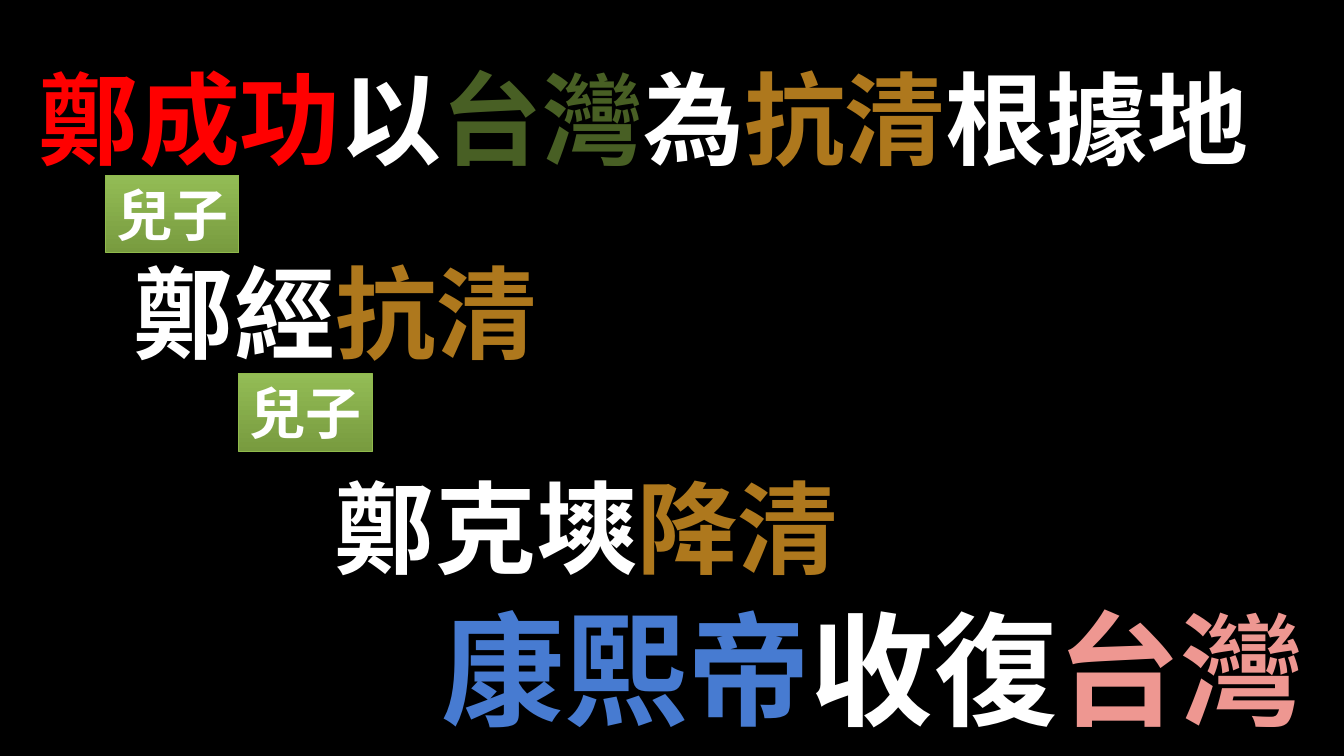
from lxml.etree import SubElement
from pptx import Presentation
from pptx.dml.color import RGBColor
from pptx.enum.shapes import MSO_SHAPE
from pptx.enum.text import MSO_ANCHOR, MSO_AUTO_SIZE, PP_ALIGN
from pptx.oxml.ns import qn
from pptx.util import Inches, Pt

BLACK = RGBColor(0x00, 0x00, 0x00)
WHITE = RGBColor(0xFF, 0xFF, 0xFF)
RED = RGBColor(0xFF, 0x00, 0x00)
GREEN = RGBColor(0x48, 0x5F, 0x24)
GOLD = RGBColor(0xAE, 0x78, 0x1D)
BLUE = RGBColor(0x47, 0x7B, 0xD1)
PINK = RGBColor(0xEE, 0x97, 0x91)
TAG_TOP = RGBColor(0x93, 0xBC, 0x55)
TAG_BOTTOM = RGBColor(0x78, 0x9B, 0x3F)
TAG_EDGE = RGBColor(0x90, 0xBA, 0x4C)

FONT = "Noto Sans CJK SC"
CELL = Inches(0.1)
FRAME = {
    "word_wrap": False,
    "auto_size": MSO_AUTO_SIZE.SHAPE_TO_FIT_TEXT,
    "vertical_anchor": MSO_ANCHOR.TOP,
    "margin_left": CELL,
    "margin_right": CELL,
    "margin_top": CELL // 2,
    "margin_bottom": CELL // 2,
}


def cells(*counts):
    return [round(count * CELL) for count in counts]


def apply(target, values):
    for name, value in values.items():
        setattr(target, name, value)


def place(shape, area):
    apply(shape, dict(zip(("left", "top", "width", "height"), cells(*area))))


def write(shape, spans, size, align=PP_ALIGN.LEFT):
    apply(shape.text_frame, FRAME)
    para = shape.text_frame.paragraphs[0]
    para.alignment = align
    for text, color in spans:
        span = para.add_run()
        span.text = text
        apply(span.font, {"name": FONT, "size": Pt(size), "bold": True})
        span.font.color.rgb = color
        east_asian = SubElement(span.font._element, qn("a:ea"))
        east_asian.set("typeface", FONT)


def add_title(page, area, spans, size):
    title = page.shapes.title
    write(title, spans, size)
    place(title, area)


def add_line(page, area, spans, size):
    box = page.shapes.add_textbox(*cells(*area))
    write(box, spans, size)
    place(box, area)


def add_shadow(shape):
    shape.shadow.inherit = False
    effects = shape._element.spPr.find(qn("a:effectLst"))
    shadow = SubElement(effects, qn("a:outerShdw"), blurRad=str(Pt(4)),
                        dist=str(Pt(3)), dir="5400000", rotWithShape="0")
    color = SubElement(shadow, qn("a:srgbClr"), val=str(BLACK))
    SubElement(color, qn("a:alpha"), val="35000")


def add_son_tag(page, left, top):
    area = (left, top, 13.2, 7.7)
    tag = page.shapes.add_shape(MSO_SHAPE.RECTANGLE, *cells(*area))
    tag.fill.gradient()
    tag.fill.gradient_angle = 270
    for stop, color in zip(tag.fill.gradient_stops, (TAG_TOP, TAG_BOTTOM)):
        stop.color.rgb = color
    tag.line.color.rgb = TAG_EDGE
    tag.line.width = Pt(0.75)
    add_shadow(tag)
    write(tag, [("兒子", WHITE)], 40, PP_ALIGN.CENTER)


def main():
    deck = Presentation()
    apply(deck, {"slide_width": Inches(13.33), "slide_height": Inches(7.5)})
    page = deck.slides.add_slide(deck.slide_layouts[5])
    page.background.fill.solid()
    page.background.fill.fore_color.rgb = BLACK

    add_title(page, (2.8, 5.1, 123.2, 13.1),
              [("鄭成功", RED), ("以", WHITE), ("台灣", GREEN),
               ("為", WHITE), ("抗清", GOLD), ("根據地", WHITE)], 72)
    add_son_tag(page, 10.5, 17.4)
    add_line(page, (12.3, 24.4, 42.4, 13.1),
             [("鄭經", WHITE), ("抗清", GOLD)], 72)
    add_son_tag(page, 23.7, 37.1)
    add_line(page, (32.2, 45.7, 52.5, 13.1),
             [("鄭克塽", WHITE), ("降清", GOLD)], 72)
    add_line(page, (42.8, 58.4, 88.4, 15.8),
             [("康熙帝", BLUE), ("收復", WHITE), ("台灣", PINK)], 88)
    deck.save("out.pptx")


if __name__ == "__main__":
    main()
